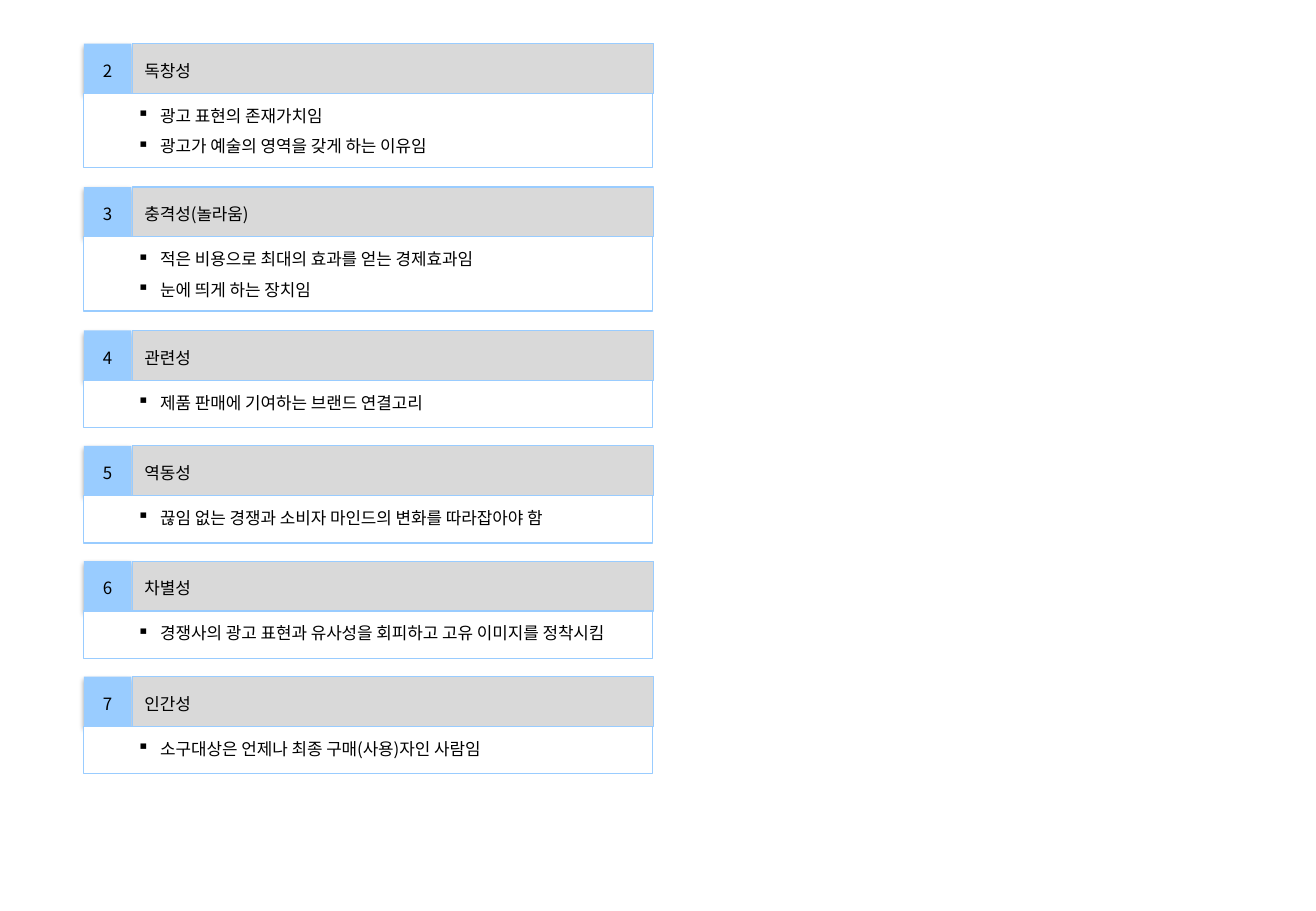
import pptx
import pptx.util
import pptx.dml.color
import pptx.enum.shapes
import pptx.enum.text
import pptx.oxml
import pptx.oxml.ns

Inches, Pt = pptx.util.Inches, pptx.util.Pt
RGBColor = pptx.dml.color.RGBColor
SHAPES = pptx.enum.shapes.MSO_SHAPE
ALIGN = pptx.enum.text.PP_ALIGN
ANCHOR = pptx.enum.text.MSO_ANCHOR

# Content: number, heading, points
CARDS = [
    ("2", "독창성", ["광고 표현의 존재가치임", "광고가 예술의 영역을 갖게 하는 이유임"]),
    ("3", "충격성(놀라움)", ["적은 비용으로 최대의 효과를 얻는 경제효과임", "눈에 띄게 하는 장치임"]),
    ("4", "관련성", ["제품 판매에 기여하는 브랜드 연결고리"]),
    ("5", "역동성", ["끊임 없는 경쟁과 소비자 마인드의 변화를 따라잡아야 함"]),
    ("6", "차별성", ["경쟁사의 광고 표현과 유사성을 회피하고 고유 이미지를 정착시킴"]),
    ("7", "인간성", ["소구대상은 언제나 최종 구매(사용)자인 사람임"]),
]

# Style
FONT = "Noto Sans CJK KR"
BLUE = RGBColor(0x99, 0xCC, 0xFF)
GRAY = RGBColor(0xD9, 0xD9, 0xD9)
WHITE = RGBColor(0xFF, 0xFF, 0xFF)
BLACK = RGBColor(0, 0, 0)
NAMESPACE = pptx.oxml.ns.nsdecls("a")

# Layout in inches; the second index is the number of points on a card
LEFT, FIRST_TOP = 0.69, 0.36
BADGE_WIDTH, HEADER_HEIGHT = 0.39, 0.41
HEADER_LEFT, HEADER_WIDTH = 1.09, 4.29
BODY_WIDTH = 4.68
BODY_HEIGHT = {1: 0.39, 2: 0.61}
TEXT_HEIGHT = {1: 0.27, 2: 0.52}
CARD_STEP = {1: 0.95, 2: 1.18}


def add_panel(page, kind, area, fill, line=None):
    panel = page.shapes.add_shape(kind, *map(Inches, area))
    panel.shadow.inherit = False
    if kind == SHAPES.ROUNDED_RECTANGLE:
        panel.adjustments[0] = 0
    panel.fill.solid()
    panel.fill.fore_color.rgb = fill
    if line is None:
        panel.line.fill.background()
    else:
        panel.line.color.rgb = line
        panel.line.width = Pt(0.75)
    return panel


def add_span(para, text):
    span = para.add_run()
    span.text = text
    span.font.size = Pt(10)
    span.font.name = FONT
    span.font.color.rgb = BLACK
    span.font._element.append(pptx.oxml.parse_xml(f'<a:ea {NAMESPACE} typeface="{FONT}"/>'))


def add_label(panel, text, align):
    panel.text_frame.vertical_anchor = ANCHOR.MIDDLE
    para = panel.text_frame.paragraphs[0]
    para.alignment = align
    para.line_spacing = 1.2
    add_span(para, text)


def add_shadow(panel):
    effects = panel._element.spPr.find(pptx.oxml.ns.qn("a:effectLst"))
    effects.append(pptx.oxml.parse_xml(
        f'<a:outerShdw {NAMESPACE} blurRad="{Pt(3.1)}" dist="{Pt(1.8)}" dir="5400000" '
        'rotWithShape="0"><a:srgbClr val="000000"><a:alpha val="35000"/></a:srgbClr></a:outerShdw>'))


def add_points(page, top, points):
    box = page.shapes.add_textbox(
        Inches(1.03), Inches(top), Inches(4.51), Inches(TEXT_HEIGHT[len(points)]))
    frame = box.text_frame
    frame.word_wrap = True
    for index, point in enumerate(points):
        para = frame.paragraphs[0] if index == 0 else frame.add_paragraph()
        properties = para._p.get_or_add_pPr()
        properties.set("marL", str(Inches(0.19)))
        properties.set("indent", str(Inches(-0.19)))
        properties.append(pptx.oxml.parse_xml(f'<a:buChar {NAMESPACE} char="▪"/>'))
        para.line_spacing = Pt(12)
        if index:
            para.space_before = Pt(6)
        add_span(para, point)


def add_card(page, top, number, heading, points):
    badge = add_panel(page, SHAPES.ROUNDED_RECTANGLE,
                      (LEFT, top, BADGE_WIDTH, HEADER_HEIGHT), BLUE)
    add_shadow(badge)
    add_label(badge, number, ALIGN.CENTER)
    body_top = top + HEADER_HEIGHT
    add_panel(page, SHAPES.RECTANGLE,
              (LEFT, body_top, BODY_WIDTH, BODY_HEIGHT[len(points)]), WHITE, BLUE)
    header = add_panel(page, SHAPES.ROUNDED_RECTANGLE,
                       (HEADER_LEFT, top, HEADER_WIDTH, HEADER_HEIGHT), GRAY, BLUE)
    add_label(header, heading, ALIGN.LEFT)
    add_points(page, body_top + 0.05, points)


def main():
    deck = pptx.Presentation()
    deck.slide_width, deck.slide_height = Inches(10.83), Inches(7.5)
    page = deck.slides.add_slide(deck.slide_layouts[6])
    top = FIRST_TOP
    for number, heading, points in CARDS:
        add_card(page, top, number, heading, points)
        top += CARD_STEP[len(points)]
    deck.save("out.pptx")


if __name__ == "__main__":
    main()
